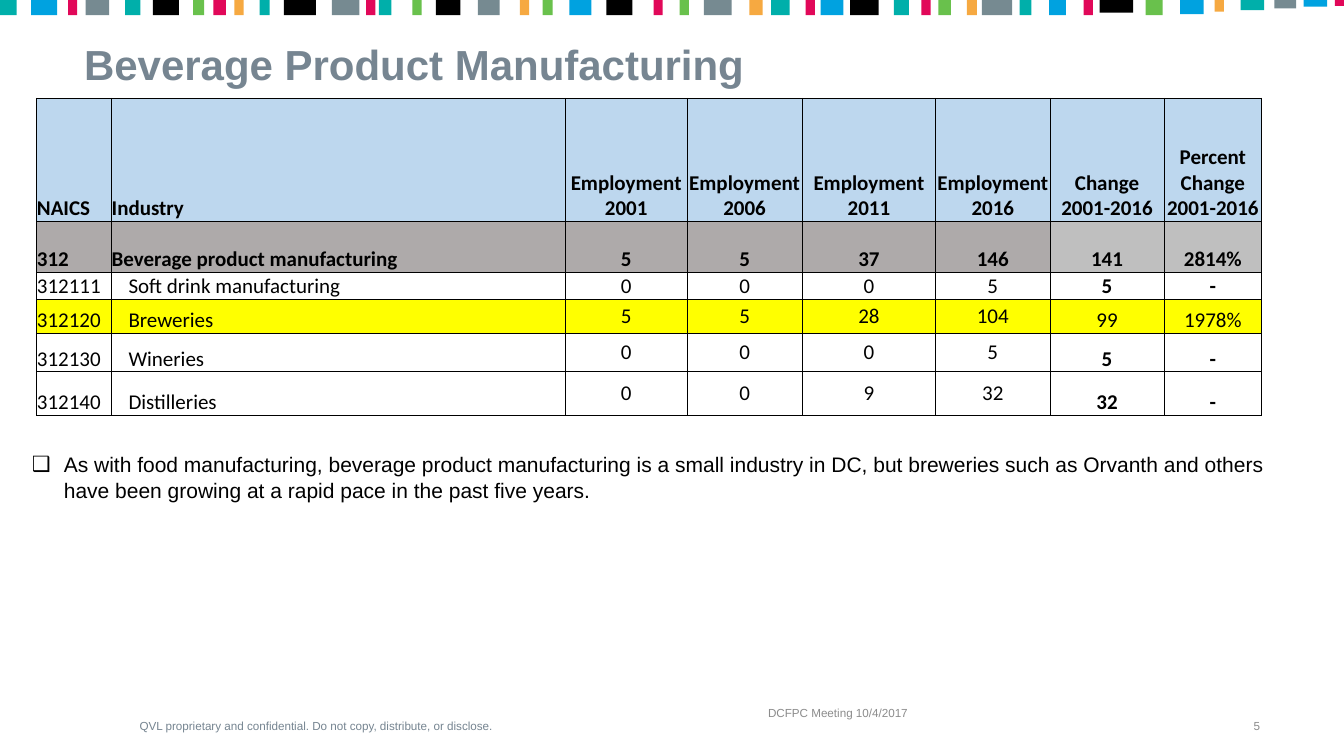
"""Build the Beverage Product Manufacturing employment slide."""
from lxml import etree
from pptx import Presentation
from pptx import util as u
from pptx.dml.color import RGBColor
from pptx.enum import shapes, text
from pptx.oxml import ns

TEAL = RGBColor(0x00, 0xAF, 0xAA)
BLUE = RGBColor(0x00, 0xA2, 0xE0)
PINK = RGBColor(0xE1, 0x08, 0x59)
SLATE = RGBColor(0x76, 0x8A, 0x91)
GREEN = RGBColor(0x69, 0xC1, 0x4C)
ORANGE = RGBColor(0xF6, 0xA9, 0x41)
BLACK = RGBColor(0x00, 0x00, 0x00)
TITLE_GREY = RGBColor(0x76, 0x85, 0x91)
FOOT_GREY = RGBColor(0x8C, 0x8C, 0x8C)
HEAD_BLUE = RGBColor(0xBD, 0xD7, 0xEE)
TOTAL_GREY = RGBColor(0xAE, 0xAA, 0xAA)
CHANGE_GREY = RGBColor(0xBF, 0xBF, 0xBF)
YELLOW = RGBColor(0xFF, 0xFF, 0x00)

BARS = [
    (0, .2, TEAL), (.37, .31, BLUE), (.81, .11, PINK), (1.02, .28, SLATE),
    (1.49, .18, TEAL), (1.82, .31, BLACK), (2.3, .13, GREEN), (2.54, .15, PINK),
    (2.79, .11, ORANGE), (3.09, .12, TEAL), (3.38, .38, BLACK), (3.95, .33, SLATE),
    (4.36, .11, PINK), (4.51, .15, TEAL), (4.91, .11, GREEN), (5.19, .29, BLACK),
    (5.69, .26, SLATE), (6.19, .11, ORANGE), (6.46, .12, GREEN), (6.78, .26, BLUE),
    (7.22, .31, BLACK), (7.78, .11, PINK), (8.09, .11, GREEN), (8.38, .33, SLATE),
    (8.92, .16, ORANGE), (9.18, .22, TEAL), (9.59, .11, PINK), (9.77, .27, BLUE),
    (10.12, .34, BLACK), (10.64, .18, TEAL), (10.97, .11, PINK), (11.17, .15, GREEN),
    (11.51, .12, ORANGE), (11.69, .36, SLATE), (12.14, .14, TEAL), (12.49, .2, BLUE),
    (12.9, .11, PINK), (13.09, .4, BLACK, .15), (13.64, .2, GREEN),
    (14.05, .28, BLUE, .17), (14.46, .11, ORANGE, .14), (14.77, .28, TEAL, .12),
    (15.17, .26, SLATE, .1), (15.52, .28, BLUE, .08), (15.89, .11, PINK, .07),
]
COLS = [.89, 5.4, 1.45, 1.37, 1.59, 1.36, 1.36, 1.16]
ROWS = [1.16, .3, .61, .32, .4, .46, .52]
DATA = [
    ["", ""] + ["Employment"] * 4 + ["Change", "Percent Change"],
    ["NAICS", "Industry", "2001", "2006", "2011", "2016", "2001-2016", "2001-2016"],
    ["312", "Beverage product manufacturing", "5", "5", "37", "146", "141", "2814%"],
    ["312111", "Soft drink manufacturing", "0", "0", "0", "5", "5", "-"],
    ["312120", "Breweries", "5", "5", "28", "104", "99", "1978%"],
    ["312130", "Wineries", "0", "0", "0", "5", "5", "-"],
    ["312140", "Distilleries", "0", "0", "9", "32", "32", "-"],
]
HEAD_ROWS, TOTAL, BREWERIES = (0, 1), 2, 4


def add_run(p, words, size, color, font="Arial", bold=False):
    r = p.add_run()
    r.text = words
    r.font.name, r.font.size, r.font.bold = font, u.Pt(size), bold
    r.font.color.rgb = color


def place(sp, left, top, width, height):
    sp.left, sp.top = u.Inches(left), u.Inches(top)
    sp.width, sp.height = u.Inches(width), u.Inches(height)


def set_frame(tf, anchor, inset=0):
    tf.word_wrap, tf.auto_size = True, text.MSO_AUTO_SIZE.NONE
    tf.vertical_anchor = anchor
    tf.margin_left = tf.margin_right = u.Inches(inset)
    tf.margin_top = tf.margin_bottom = u.Inches(inset / 2)


def add_bar(s, left, width, color, height=.18):
    sp = s.shapes.add_shape(shapes.MSO_SHAPE.RECTANGLE, u.Inches(left), 0,
                            u.Inches(width), u.Inches(height))
    sp.shadow.inherit = False
    sp.fill.solid()
    sp.fill.fore_color.rgb = color
    sp.line.fill.background()


def add_footer(s, words, left, top, width, color, align):
    sp = s.shapes.add_textbox(u.Inches(left), u.Inches(top), u.Inches(width), u.Inches(.39))
    set_frame(sp.text_frame, text.MSO_ANCHOR.BOTTOM)
    p = sp.text_frame.paragraphs[0]
    p.alignment = align
    add_run(p, words, 10, color)


def set_title(s, words):
    sp = s.shapes.title
    place(sp, .9, .33, 14.2, .94)
    set_frame(sp.text_frame, text.MSO_ANCHOR.MIDDLE, .1)
    p = sp.text_frame.paragraphs[0]
    p.alignment, p.line_spacing = text.PP_ALIGN.LEFT, .9
    add_run(p, words, 36, TITLE_GREY, bold=True)


def set_body(s, words):
    sp = s.placeholders[1]
    place(sp, .38, 5.38, 14.68, 1.25)
    set_frame(sp.text_frame, text.MSO_ANCHOR.TOP)
    p = sp.text_frame.paragraphs[0]
    pPr = p._p.get_or_add_pPr()
    pPr.set("marL", str(u.Inches(.38)))
    pPr.set("indent", str(u.Inches(-.38)))
    etree.SubElement(pPr, ns.qn("a:buChar")).set("char", "❑")
    p.space_before = u.Pt(0)
    add_run(p, words, 18, BLACK)


def set_border(cell, side, width):
    ln = etree.SubElement(cell._tc.get_or_add_tcPr(), ns.qn("a:ln" + side))
    if not width:
        etree.SubElement(ln, ns.qn("a:noFill"))
        return
    ln.set("w", str(u.Pt(width)))
    fill = etree.SubElement(ln, ns.qn("a:solidFill"))
    etree.SubElement(fill, ns.qn("a:srgbClr")).set("val", str(BLACK))


def cell_fill(row, col):
    if row in HEAD_ROWS:
        return HEAD_BLUE
    if row == TOTAL:
        return CHANGE_GREY if col > 5 else TOTAL_GREY
    return YELLOW if row == BREWERIES else None


def format_cell(cell, row, col, words):
    last_row, last_col = len(ROWS) - 1, len(COLS) - 1
    set_border(cell, "L", 1 if col == 0 else .5)
    set_border(cell, "R", 1 if col == last_col else .5)
    set_border(cell, "T", {0: 1, 1: 0}.get(row, .5))
    set_border(cell, "B", {0: 0, last_row: 1}.get(row, .5))
    color = cell_fill(row, col)
    if color is None:
        cell.fill.background()
    else:
        cell.fill.solid()
        cell.fill.fore_color.rgb = color
    detail = row > TOTAL
    cell.margin_left = u.Inches(.2 if detail and col == 1 else 0)
    cell.margin_right = cell.margin_top = cell.margin_bottom = 0
    middle = detail and 2 <= col <= 5
    cell.vertical_anchor = text.MSO_ANCHOR.MIDDLE if middle else text.MSO_ANCHOR.BOTTOM
    if words:
        p = cell.text_frame.paragraphs[0]
        p.alignment = text.PP_ALIGN.CENTER if col > 1 else text.PP_ALIGN.LEFT
        bold = not detail or (col > 5 and row != BREWERIES)
        add_run(p, words, 18, BLACK, "Calibri", bold)


def add_employment_table(s):
    tbl = s.shapes.add_table(len(ROWS), len(COLS), u.Inches(.44), u.Inches(1.17),
                             u.Inches(sum(COLS)), u.Inches(sum(ROWS))).table
    tbl.first_row = tbl.horz_banding = False
    for column, width in zip(tbl.columns, COLS):
        column.width = u.Inches(width)
    for i, (height, values) in enumerate(zip(ROWS, DATA)):
        tbl.rows[i].height = u.Inches(height)
        for j, words in enumerate(values):
            format_cell(tbl.cell(i, j), i, j, words)


def main():
    prs = Presentation()
    prs.slide_width, prs.slide_height = u.Inches(16), u.Inches(9)
    s = prs.slides.add_slide(prs.slide_layouts[1])
    for bar in BARS:
        add_bar(s, *bar)
    set_title(s, "Beverage Product Manufacturing")
    set_body(s, "As with food manufacturing, beverage product manufacturing is a small "
                "industry in DC, but breweries such as Orvanth and others have been "
                "growing at a rapid pace in the past five years.")
    center, right = text.PP_ALIGN.CENTER, text.PP_ALIGN.RIGHT
    add_footer(s, "QVL proprietary and confidential. Do not copy, distribute, or disclose.",
               1.27, 8.34, 4.98, TITLE_GREY, center)
    add_footer(s, "DCFPC Meeting 10/4/2017", 6.46, 8.18, 7.03, FOOT_GREY, center)
    add_footer(s, "5", 14.04, 8.34, .96, FOOT_GREY, right)
    add_employment_table(s)
    prs.save("out.pptx")


if __name__ == "__main__":
    main()
